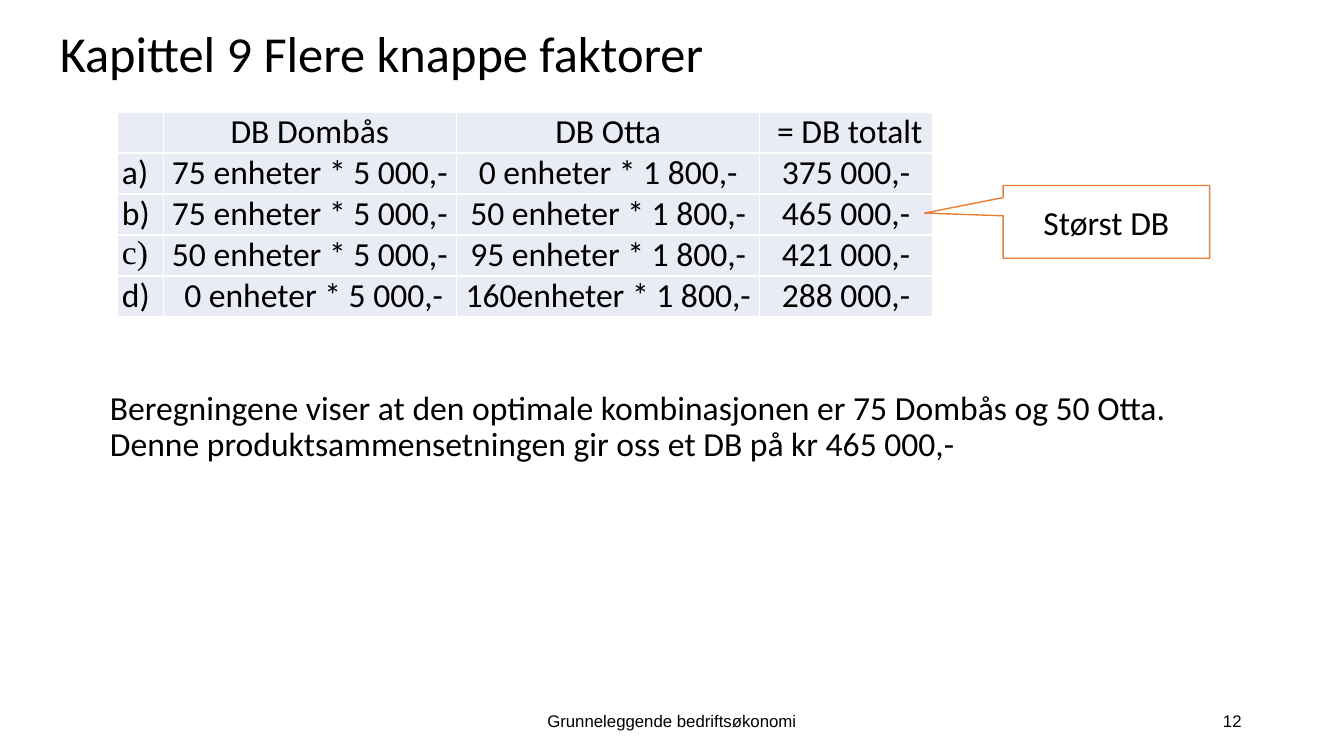
from lxml import etree
from pptx import Presentation
from pptx.dml.color import RGBColor
from pptx.enum.shapes import MSO_SHAPE
from pptx.enum.text import MSO_ANCHOR, PP_ALIGN
from pptx.oxml.ns import qn
from pptx.util import Pt

LEFT, CENTER, RIGHT = PP_ALIGN.LEFT, PP_ALIGN.CENTER, PP_ALIGN.RIGHT
TOP, MIDDLE = MSO_ANCHOR.TOP, MSO_ANCHOR.MIDDLE
CALLOUT = MSO_SHAPE.RECTANGULAR_CALLOUT

COLUMN_WIDTHS = [33.1, 209.5, 216.7, 123.1]
ROW_HEIGHT = 29.3
CONTRIBUTIONS = [
    ["", "DB Dombås", "DB Otta", " = DB totalt"],
    ["a)", "75 enheter * 5 000,-", "0 enheter * 1 800,-", "375 000,-"],
    ["b)", "75 enheter * 5 000,-", "50 enheter * 1 800,-", "465 000,-"],
    ["c)", "50 enheter * 5 000,-", "95 enheter * 1 800,-", "421 000,-"],
    ["d)", " 0 enheter * 5 000,-", "160enheter * 1 800,-", "288 000,-"],
]
CONCLUSION = (
    "Beregningene viser at den optimale kombinasjonen er 75 Dombås og 50 Otta. "
    "Denne produktsammensetningen gir oss et DB på kr 465 000,-"
)


def color(value):
    """Turn a hex string into a colour."""
    return RGBColor.from_string(value)


class SlideBuilder:
    """Hold the style and the current slide, and add elements to it."""

    font, size, ink = "Calibri", 24, "000000"
    paper, band, accent = "FFFFFF", "E9EBF5", "ED7D31"

    def __init__(self, presentation):
        """Add a title-only slide."""
        self.slide = presentation.slides.add_slide(presentation.slide_layouts[5])

    def fill_text(self, frame, text, align=LEFT, anchor=MIDDLE, size=None, font=None):
        """Put one run into a text frame and return its paragraph."""
        frame.word_wrap = True
        frame.vertical_anchor = anchor
        paragraph = frame.paragraphs[0]
        paragraph.alignment = align
        run = paragraph.add_run()
        run.text = text
        run.font.size = Pt(size or self.size)
        run.font.name = font or self.font
        run.font.color.rgb = color(self.ink)
        return paragraph

    def title(self, text, left, top, width, height):
        """Place and fill the title placeholder."""
        title = self.slide.shapes.title
        title.left, title.top = Pt(left), Pt(top)
        title.width, title.height = Pt(width), Pt(height)
        self.fill_text(title.text_frame, text, size=36).line_spacing = 0.9

    def text(self, text, left, top, width, height, **style):
        """Add a text box and return its paragraph."""
        box = self.slide.shapes.add_textbox(Pt(left), Pt(top), Pt(width), Pt(height))
        return self.fill_text(box.text_frame, text, **style)

    def border(self, cell):
        """Draw thin lines on all four sides of a cell."""
        properties = cell._tc.get_or_add_tcPr()
        for index, side in enumerate(("a:lnL", "a:lnR", "a:lnT", "a:lnB")):
            line = etree.Element(qn(side), w=str(Pt(1)))
            fill = etree.SubElement(line, qn("a:solidFill"))
            etree.SubElement(fill, qn("a:srgbClr"), val=self.paper)
            properties.insert(index, line)

    def table(self, rows, left, top, widths, row_height):
        """Add a table with one fill and centred values."""
        table = self.slide.shapes.add_table(
            len(rows), len(widths), Pt(left), Pt(top),
            Pt(sum(widths)), Pt(row_height * len(rows)),
        ).table
        table.first_row = table.horz_banding = False
        for column, width in zip(table.columns, widths):
            column.width = Pt(width)
        for row_index, values in enumerate(rows):
            table.rows[row_index].height = Pt(row_height)
            for column_index, value in enumerate(values):
                cell = table.cell(row_index, column_index)
                cell.margin_left = cell.margin_right = Pt(3.6)
                cell.margin_top = cell.margin_bottom = 0
                cell.fill.solid()
                cell.fill.fore_color.rgb = color(self.band)
                self.border(cell)
                if value:
                    align = CENTER if column_index else LEFT
                    font = "Times New Roman" if value == "c)" else self.font
                    self.fill_text(cell.text_frame, value, align, TOP, font=font)

    def callout(self, text, left, top, width, height, pointer):
        """Add an outlined callout whose pointer is relative to its size."""
        shape = self.slide.shapes.add_shape(
            CALLOUT, Pt(left), Pt(top), Pt(width), Pt(height)
        )
        shape.shadow.inherit = False
        shape.adjustments[0], shape.adjustments[1] = pointer
        shape.fill.solid()
        shape.fill.fore_color.rgb = color(self.paper)
        shape.line.color.rgb = color(self.accent)
        shape.line.width = Pt(1)
        self.fill_text(shape.text_frame, text, CENTER)


def main():
    """Build and save the presentation."""
    presentation = Presentation()
    presentation.slide_width, presentation.slide_height = Pt(960), Pt(540)
    builder = SlideBuilder(presentation)
    footer = {"size": 12, "font": "Arial"}
    builder.text("Grunneleggende bedriftsøkonomi", 318, 500.5, 324, 28.75,
                 align=CENTER, **footer)
    builder.text("12", 678, 500.5, 216, 28.75, align=RIGHT, **footer)
    builder.title("Kapittel 9 Flere knappe faktorer", 35.5, 0, 648, 80)
    conclusion = builder.text(CONCLUSION, 71.5, 276, 806, 224.5, anchor=TOP)
    conclusion.line_spacing = 0.9
    conclusion.space_before = Pt(5)
    builder.table(CONTRIBUTIONS, 83.5, 80, COLUMN_WIDTHS, ROW_HEIGHT)
    builder.callout("Størst DB", 716.5, 132.5, 147.5, 52, (-0.88, -0.12))
    presentation.save("out.pptx")


if __name__ == "__main__":
    main()
